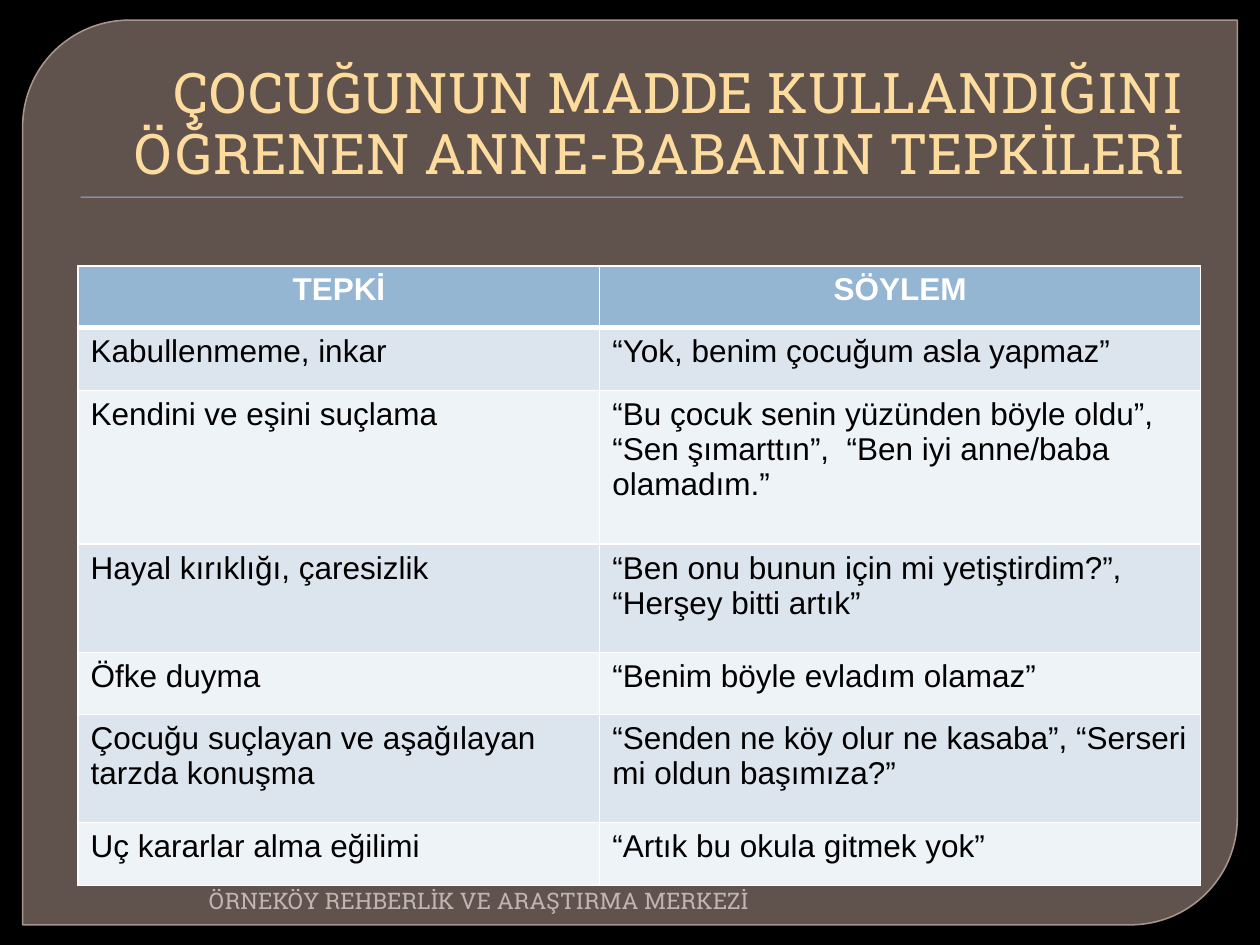
"""Build a slide with a table of parents' reactions and typical sayings."""
import pptx
import pptx.dml.color
import pptx.enum.shapes
import pptx.enum.text
import pptx.oxml
import pptx.oxml.ns
import pptx.util

Inches, Pt = pptx.util.Inches, pptx.util.Pt
ALIGN, ANCHOR = pptx.enum.text.PP_ALIGN, pptx.enum.text.MSO_ANCHOR
SHAPE = pptx.enum.shapes.MSO_SHAPE

HEADING = "ÇOCUĞUNUN MADDE KULLANDIĞINI ÖĞRENEN ANNE-BABANIN TEPKİLERİ"
CENTRE_NAME = "ÖRNEKÖY REHBERLİK VE ARAŞTIRMA MERKEZİ"
REACTIONS = [
    ("TEPKİ", "SÖYLEM"),
    ("Kabullenmeme, inkar", "“Yok, benim çocuğum asla yapmaz”"),
    ("Kendini ve eşini suçlama",
     "“Bu çocuk senin yüzünden böyle oldu”, “Sen şımarttın”,  “Ben iyi anne/baba olamadım.”"),
    ("Hayal kırıklığı, çaresizlik",
     "“Ben onu bunun için mi yetiştirdim?”, “Herşey bitti artık”"),
    ("Öfke duyma", "“Benim böyle evladım olamaz”"),
    ("Çocuğu suçlayan ve aşağılayan tarzda konuşma",
     "“Senden ne köy olur ne kasaba”, “Serseri mi oldun başımıza?”"),
    ("Uç kararlar alma eğilimi", "“Artık bu okula gitmek yok”"),
]
COLUMN_WIDTHS = (4.14, 4.77)
ROW_HEIGHTS = (0.49, 0.5, 1.22, 0.86, 0.49, 0.86, 0.5)
HEADER_FILL, BAND_FILLS = "94B6D2", ("EEF3F7", "DCE5EE")

HEADING_FONT = {"name": "Roboto Slab", "size": Pt(32), "bold": False}
FOOTER_FONT = {"name": "Roboto Slab", "size": Pt(13), "bold": False}
HEADER_FONT = {"name": "Arial", "size": Pt(18), "bold": True}
BODY_FONT = {**HEADER_FONT, "bold": False}


def rgb(colour):
    return pptx.dml.color.RGBColor.from_string(colour)


def box(left, top, width, height):
    return [Inches(length) for length in (left, top, width, height)]


def apply(target, values):
    for name, value in values.items():
        setattr(target, name, value)


def paint(target, colour):
    target.fill.solid()
    target.fill.fore_color.rgb = rgb(colour)


def set_alpha(colour_format, percent):
    colour = colour_format.find(".//" + pptx.oxml.ns.qn("a:srgbClr"))
    colour.append(pptx.oxml.parse_xml(
        f'<a:alpha {pptx.oxml.ns.nsdecls("a")} val="{percent * 1000}"/>'))


def write(frame, text, font, colour, paragraph_format):
    frame.text = text
    paragraph = frame.paragraphs[0]
    apply(paragraph, paragraph_format)
    apply(paragraph.font, font)
    paragraph.font.color.rgb = rgb(colour)


def add_border(cell, side, points):
    cell._tc.get_or_add_tcPr().append(pptx.oxml.parse_xml(
        f'<a:ln{side} {pptx.oxml.ns.nsdecls("a")} w="{Pt(points)}">'
        '<a:solidFill><a:srgbClr val="FFFFFF"/></a:solidFill>'
        f'</a:ln{side}>'))


def add_backdrop(slide, heading):
    panel = slide.shapes.add_shape(SHAPE.ROUND_2_DIAG_RECTANGLE, *box(0.18, 0.16, 9.64, 7.18))
    panel.adjustments[0], panel.adjustments[1] = 0.118, 0
    rule = slide.shapes.add_shape(SHAPE.RECTANGLE, *box(0.64, 1.56, 8.75, 0.01))
    for shape, colour in ((panel, "948079"), (rule, "94B6D2")):
        paint(shape, colour)
        shape.shadow.inherit = False
        shape.line.fill.background()
        heading.element.addprevious(shape.element)
    set_alpha(panel.element.spPr, 65)
    panel.line.color.rgb = rgb("A9948D")
    panel.line.width = Pt(0.87)


def add_reactions(slide):
    table = slide.shapes.add_table(
        len(REACTIONS), len(COLUMN_WIDTHS),
        *box(0.62, 2.11, sum(COLUMN_WIDTHS), sum(ROW_HEIGHTS))).table
    for column, width in zip(table.columns, COLUMN_WIDTHS):
        column.width = Inches(width)
    for index, (row, height, texts) in enumerate(zip(table.rows, ROW_HEIGHTS, REACTIONS)):
        row.height = Inches(height)
        header = index == 0
        for cell, text in zip(row.cells, texts):
            write(cell.text_frame, text, HEADER_FONT if header else BODY_FONT,
                  "FFFFFF" if header else "000000",
                  {"alignment": ALIGN.CENTER if header else ALIGN.LEFT})
            for side in "LRTB":
                thick = (header and side == "B") or (index == 1 and side == "T")
                add_border(cell, side, 3 if thick else 1)
            paint(cell, HEADER_FILL if header else BAND_FILLS[index % 2])


def main():
    deck = pptx.Presentation()
    deck.slide_width, deck.slide_height = Inches(10), Inches(7.5)
    slide = deck.slides.add_slide(deck.slide_layouts[5])
    paint(slide.background, "000000")

    heading = slide.shapes.title
    apply(heading, dict(zip(("left", "top", "width", "height"), box(0.5, 0.28, 9, 1.25))))
    apply(heading.text_frame, {"vertical_anchor": ANCHOR.BOTTOM, "word_wrap": True})
    write(heading.text_frame, HEADING, HEADING_FONT, "FDDC9E",
          {"alignment": ALIGN.RIGHT, "line_spacing": 0.9})

    add_backdrop(slide, heading)
    add_reactions(slide)

    footer = slide.shapes.add_textbox(*box(1.42, 7, 4.61, 0.3)).text_frame
    apply(footer, {"vertical_anchor": ANCHOR.MIDDLE, "word_wrap": True})
    write(footer, CENTRE_NAME, FOOTER_FONT, "C0B5B1", {"alignment": ALIGN.RIGHT})

    deck.save("out.pptx")


if __name__ == "__main__":
    main()
